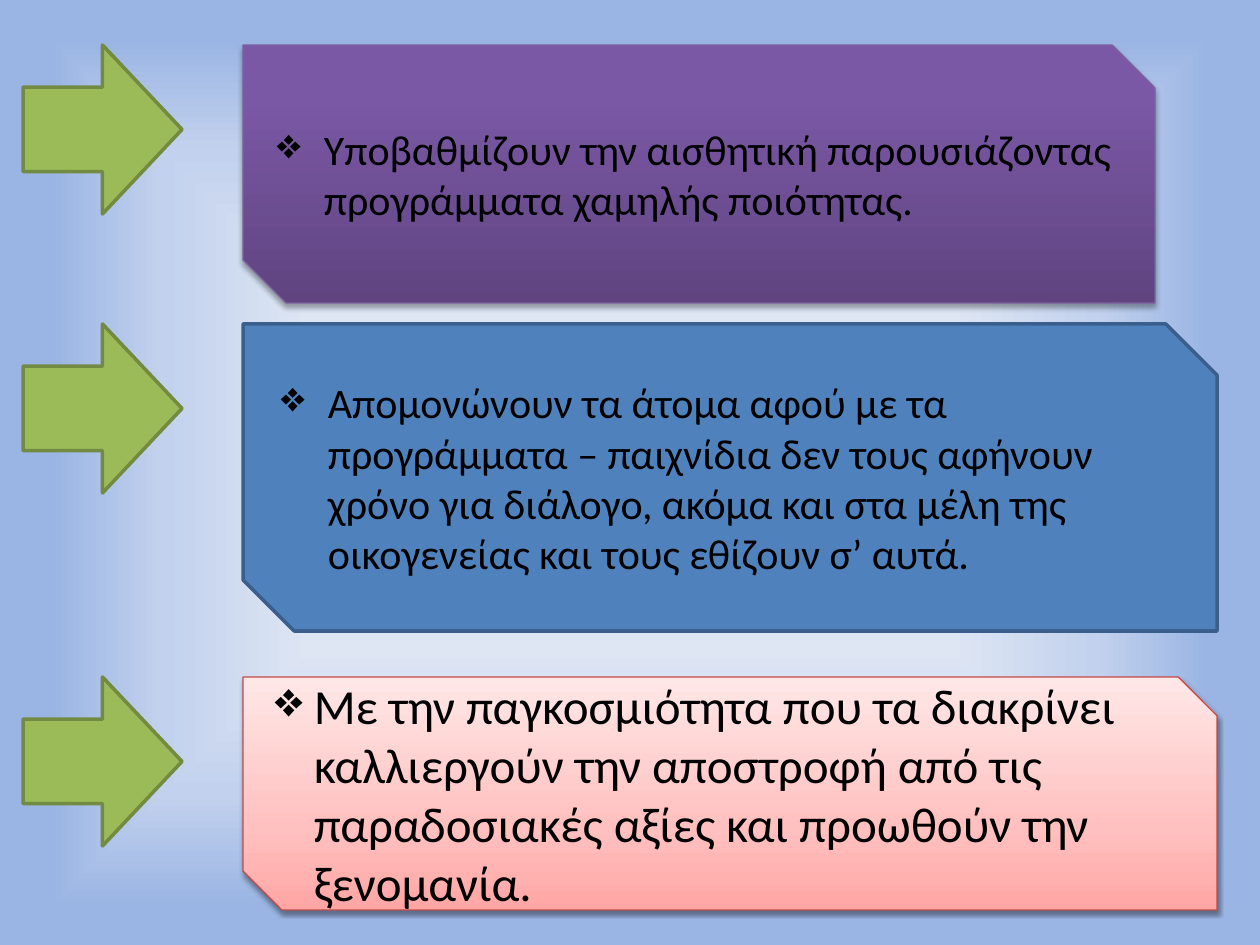
from lxml.etree import SubElement
from pptx import Presentation
from pptx.dml.color import RGBColor as Rgb
from pptx.enum.shapes import MSO_SHAPE as Shape
from pptx.enum.text import MSO_ANCHOR as Anchor, PP_ALIGN as Align
from pptx.oxml.ns import qn
from pptx.util import Pt

EMU_PER_PX = 914400 / 126
COLORS = {
    "arrow": "9BBB59", "arrow_line": "738A42",
    "purple_line": "7D60A0", "blue": "4F81BD", "blue_line": "3A5F8C",
    "pink_line": "BF4C48", "black": "000000",
}
GRADIENTS = {
    "page": [(4, "E1E8F5"), (37, "DEE6F4"), (68, "C2D1ED"), (92, "9AB5E4")],
    "purple": [(0, "5F4480"), (80, "7B58A6"), (100, "7C57A8")],
    "pink": [(0, "FFA6A5"), (35, "FFC0BF"), (100, "FFE7E7")],
}
ARROW_LEFT, ARROW_WIDTH, ARROW_HEIGHT = 23, 159, 169
BOX_LEFT = 243
ROWS = [
    dict(top=45, width=912, height=258, fill="purple", line="purple_line",
         weight=0.75, shadow=(35, 1.8), size=24, indent=47,
         text="Υποβαθμίζουν την αισθητική παρουσιάζοντας προγράμματα χαμηλής ποιότητας."),
    dict(top=324, width=974, height=307, fill="blue", line="blue_line",
         weight=2, shadow=None, size=24, indent=47,
         text="Απομονώνουν τα άτομα αφού με τα προγράμματα – παιχνίδια δεν τους "
              "αφήνουν χρόνο για διάλογο, ακόμα και στα μέλη της οικογενείας "
              "και τους εθίζουν σ’ αυτά."),
    dict(top=677, width=974, height=233, fill="pink", line="pink_line",
         weight=0.75, shadow=(38, 1.6), size=28, indent=39,
         text="Με την παγκοσμιότητα που τα διακρίνει καλλιεργούν την αποστροφή "
              "από τις παραδοσιακές αξίες και προωθούν την ξενομανία."),
]


def px(length):
    return round(length * EMU_PER_PX)


def color(name):
    return Rgb.from_string(COLORS[name])


def add_node(parent, tag, **attributes):
    return SubElement(parent, qn(tag), {key: str(value) for key, value in attributes.items()})


def paint_gradient(fill, element, stops):
    fill.solid()
    solid = element.find(".//" + qn("a:solidFill"))
    gradient = solid.makeelement(qn("a:gradFill"), {"rotWithShape": "1"})
    solid.getparent().replace(solid, gradient)
    stop_list = add_node(gradient, "a:gsLst")
    for position, value in stops:
        stop = add_node(stop_list, "a:gs", pos=position * 1000)
        add_node(stop, "a:srgbClr", val=value)
    return gradient


def paint_page(page):
    gradient = paint_gradient(page.background.fill, page.element, GRADIENTS["page"])
    center = add_node(gradient, "a:path", path="shape")
    add_node(center, "a:fillToRect", l=50000, t=50000, r=50000, b=50000)


def add_figure(page, kind, bounds, fill, line, weight):
    figure = page.shapes.add_shape(kind, *map(px, bounds))
    figure.shadow.inherit = False
    if fill in GRADIENTS:
        gradient = paint_gradient(figure.fill, figure.element, GRADIENTS[fill])
        add_node(gradient, "a:lin", ang=270 * 60000, scaled=0)
    else:
        figure.fill.solid()
        figure.fill.fore_color.rgb = color(fill)
    figure.line.color.rgb = color(line)
    figure.line.width = Pt(weight)
    return figure


def add_shadow(figure, opacity, distance):
    effects = figure.element.spPr.find(qn("a:effectLst"))
    shadow = add_node(effects, "a:outerShdw", blurRad=Pt(3.1), dist=Pt(distance),
                      dir=90 * 60000, rotWithShape=0)
    shade = add_node(shadow, "a:srgbClr", val=COLORS["black"])
    add_node(shade, "a:alpha", val=opacity * 1000)


def write_bullet(box, text, size, indent):
    frame = box.text_frame
    frame.word_wrap = True
    frame.vertical_anchor = Anchor.MIDDLE
    para = frame.paragraphs[0]
    para.text = text
    para.alignment = Align.LEFT
    para.font.name = "Calibri"
    para.font.size = Pt(size)
    para.font.color.rgb = color("black")
    properties = para._p.get_or_add_pPr()
    properties.set("marL", str(px(indent)))
    properties.set("indent", str(-px(indent)))
    bullet = properties.makeelement(qn("a:buChar"), {"char": "❖"})
    properties.insert(0, bullet)


def add_row(page, row):
    add_figure(page, Shape.RIGHT_ARROW,
               (ARROW_LEFT, row["top"], ARROW_WIDTH, ARROW_HEIGHT),
               "arrow", "arrow_line", 2)
    box = add_figure(page, Shape.SNIP_2_DIAG_RECTANGLE,
                     (BOX_LEFT, row["top"], row["width"], row["height"]),
                     row["fill"], row["line"], row["weight"])
    if row["shadow"]:
        add_shadow(box, *row["shadow"])
    write_bullet(box, row["text"], row["size"], row["indent"])


def main():
    deck = Presentation()
    deck.slide_width, deck.slide_height = px(1260), px(945)
    page = deck.slides.add_slide(deck.slide_layouts[6])
    paint_page(page)
    for row in ROWS:
        add_row(page, row)
    deck.save("out.pptx")


if __name__ == "__main__":
    main()
